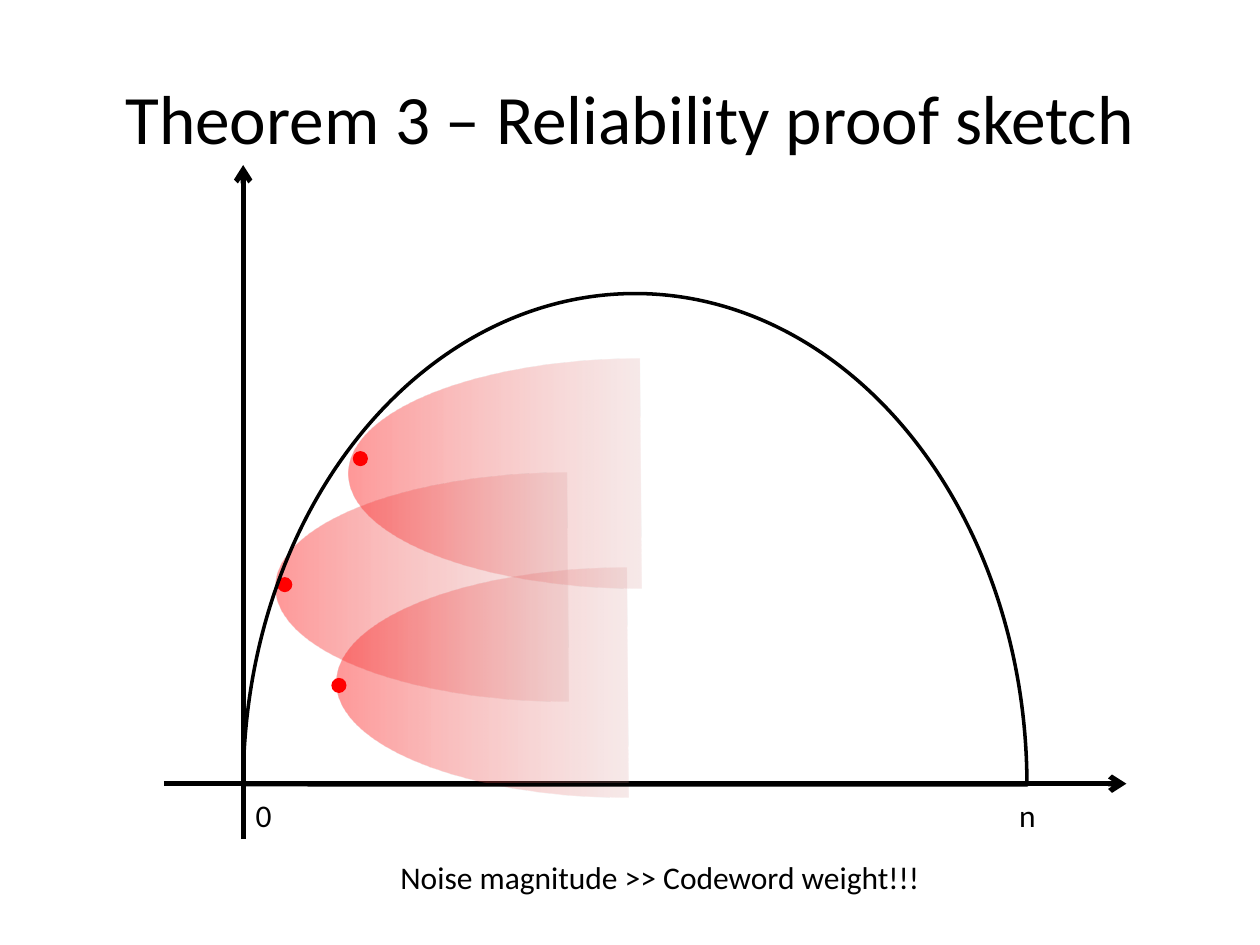
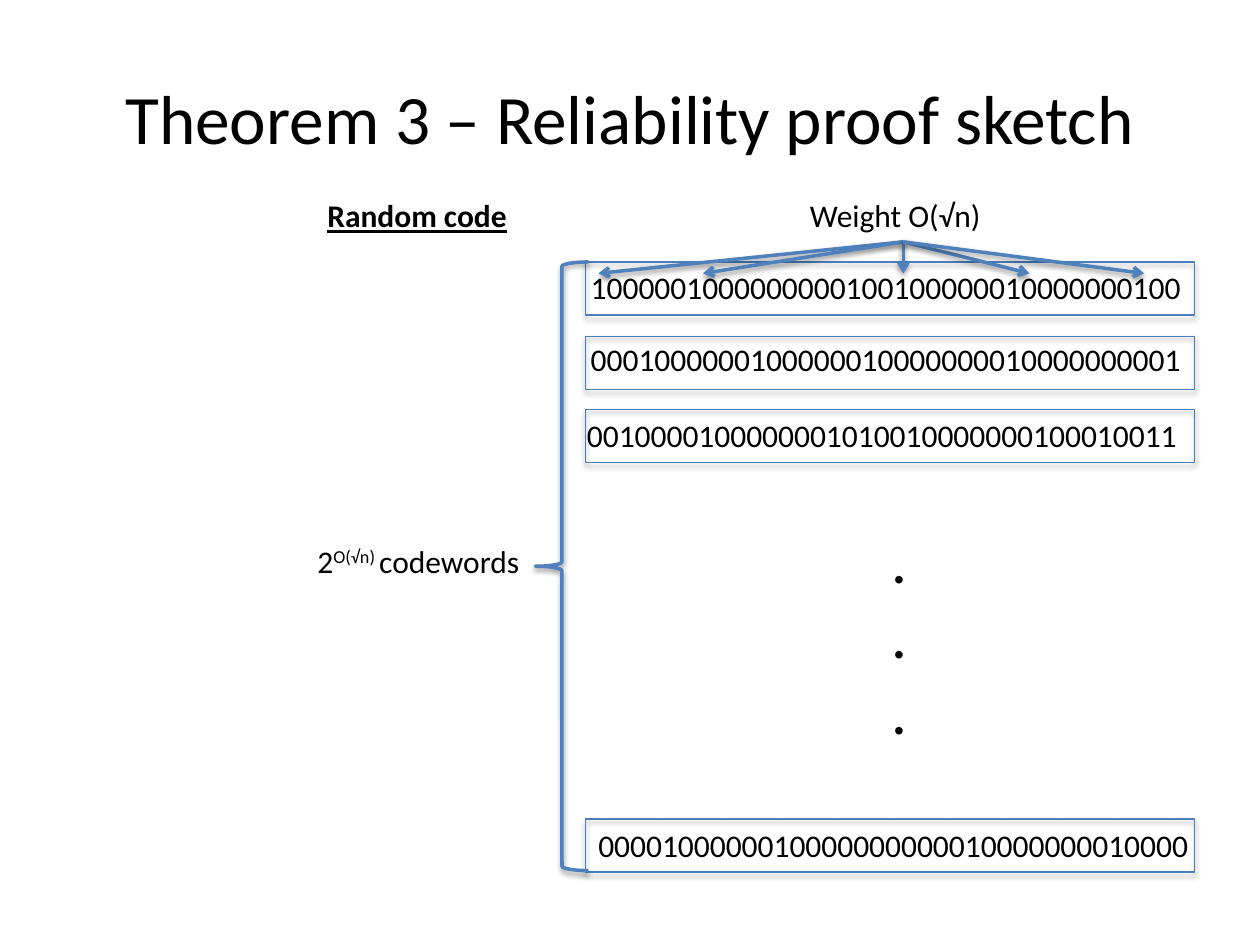
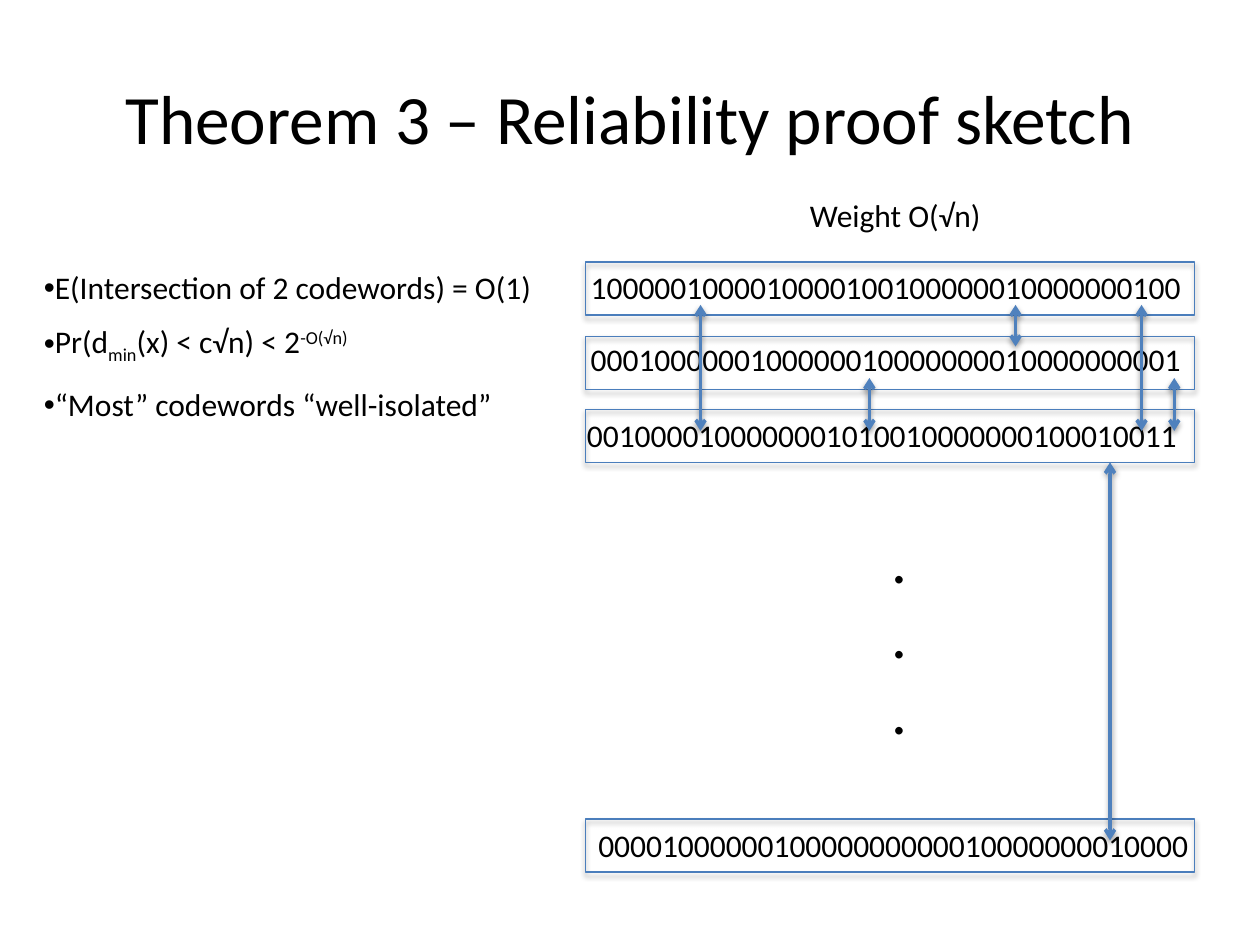
from lxml.etree import SubElement
from pptx import Presentation
from pptx.dml.color import RGBColor
from pptx.enum.shapes import MSO_CONNECTOR as Connector, MSO_SHAPE as Shape
from pptx.enum.text import MSO_ANCHOR as Anchor, MSO_AUTO_SIZE as AutoSize, PP_ALIGN as Align
from pptx.oxml.ns import qn
from pptx.util import Inches, Pt

BLACK = RGBColor(0x00, 0x00, 0x00)
RED = RGBColor(0xFF, 0x00, 0x00)
ROSE = RGBColor(0xD9, 0x96, 0x94)
WHITE = RGBColor(0xFF, 0xFF, 0xFF)
BLUE = RGBColor(0x4F, 0x81, 0xBD)
BORDER_BLUE = RGBColor(0x4B, 0x7E, 0xBC)
FONT = "Calibri"
TITLE = "Theorem 3 – Reliability proof sketch"
NOISE_FADE = ((0, RED, 40), (50, ROSE, 20), (100, WHITE, 0))
BOX_SHADOW = (35, 1.8)
LINE_SHADOW = (38, 1.6)


class Deck:
    """Holds the shared style and the slide being built."""

    def __init__(self):
        self.presentation = Presentation()
        self.presentation.slide_width = Inches(10)
        self.presentation.slide_height = Inches(7.5)
        self.slide = None

    def add_slide(self):
        self.slide = self.presentation.slides.add_slide(self.presentation.slide_layouts[6])
        title = self.text(0.5, 0.3, 9, 1.25, TITLE, size=39.6, grow=False)
        title.vertical_anchor = Anchor.MIDDLE
        title.paragraphs[0].alignment = Align.CENTER

    def text(self, left, top, width, height, *lines, size=18, wrap=True, grow=True,
             bullet=False, heading=False):
        """Adds lines, each a string or a list of (text, baseline percent) runs."""
        box = self.slide.shapes.add_textbox(
            Inches(left), Inches(top), Inches(width), Inches(height))
        frame = box.text_frame
        frame.word_wrap = wrap
        frame.auto_size = AutoSize.SHAPE_TO_FIT_TEXT if grow else AutoSize.NONE
        for index, line in enumerate(lines):
            paragraph = frame.add_paragraph() if index else frame.paragraphs[0]
            if bullet:
                properties = paragraph._p.get_or_add_pPr()
                SubElement(properties, qn("a:buFont"), typeface="Arial")
                SubElement(properties, qn("a:buChar"), char="•")
            font = paragraph.font
            font.name, font.size, font.color.rgb = FONT, Pt(size), BLACK
            if heading:
                font.bold = font.underline = True
            for words, baseline in [(line, 0)] if isinstance(line, str) else line:
                run = paragraph.add_run()
                run.text = words
                if baseline:
                    run._r.get_or_add_rPr().set("baseline", str(baseline * 1000))
        return frame

    def shape(self, kind, left, top, width, height, fill=None, line=None, weight=0,
              adjustments=(), rotation=0, shadow=None):
        shape = self.slide.shapes.add_shape(
            kind, Inches(left), Inches(top), Inches(width), Inches(height))
        shape.rotation = rotation
        for index, value in enumerate(adjustments):
            shape.adjustments[index] = value
        if fill is None:
            shape.fill.background()
        elif isinstance(fill, RGBColor):
            shape.fill.solid()
            shape.fill.fore_color.rgb = fill
        else:
            self.fade(shape, fill)
        if line is None:
            shape.line.fill.background()
        else:
            shape.line.color.rgb = line
            shape.line.width = Pt(weight)
        shape.shadow.inherit = False
        self.cast_shadow(shape, shadow)

    def fade(self, shape, stops):
        shape.fill.gradient()
        shape.fill.gradient_angle = 0
        stop_list = shape._element.spPr.find(qn("a:gradFill")).find(qn("a:gsLst"))
        for stop in list(stop_list):
            stop_list.remove(stop)
        for position, color, opacity in stops:
            stop = SubElement(stop_list, qn("a:gs"), pos=str(position * 1000))
            tint = SubElement(stop, qn("a:srgbClr"), val=str(color))
            SubElement(tint, qn("a:alpha"), val=str(opacity * 1000))

    def cast_shadow(self, shape, shadow):
        if shadow is None:
            return
        opacity, distance = shadow
        effects = shape._element.spPr.find(qn("a:effectLst"))
        outer = SubElement(effects, qn("a:outerShdw"), blurRad=str(Pt(3.1)),
                           dist=str(Pt(distance)), dir="5400000", rotWithShape="0")
        tint = SubElement(outer, qn("a:srgbClr"), val=str(BLACK))
        SubElement(tint, qn("a:alpha"), val=str(opacity * 1000))

    def arrow(self, start, end, color=BLUE, weight=2, double=False, shadow=LINE_SHADOW):
        arrow = self.slide.shapes.add_connector(
            Connector.STRAIGHT, *(Inches(value) for value in (*start, *end)))
        arrow.line.color.rgb = color
        arrow.line.width = Pt(weight)
        properties = arrow._element.spPr
        outline = properties.find(qn("a:ln"))
        for tip in ("a:headEnd", "a:tailEnd") if double else ("a:tailEnd",):
            SubElement(outline, qn(tip), type="arrow")
        SubElement(properties, qn("a:effectLst"))
        self.cast_shadow(arrow, shadow)

    def codebook(self, first_codeword):
        codewords = (
            (2.08, 4.59, 2.08, first_codeword),
            (2.67, 4.59, 2.65, "0001000000100000010000000010000000001"),
            (3.25, 4.56, 3.25, "0010000100000001010010000000100010011"),
            (6.5, 4.65, 6.51, "0000100000010000000000010000000010000"),
        )
        for frame_top, left, top, codeword in codewords:
            self.shape(Shape.RECTANGLE, 4.65, frame_top, 4.83, 0.42,
                       line=BORDER_BLUE, weight=0.75, shadow=BOX_SHADOW)
            self.text(left, top, 4.94, 0.4, codeword, wrap=False)
        self.text(6.98, 4.08, 0.33, 1.92, ".", ".", ".", size=36, wrap=False)
        self.text(6.33, 1.51, 1.67, 0.4, "Weight O(√n)")


def noise_slide(deck):
    deck.add_slide()
    for start, end in (((1.3, 6.22), (8.94, 6.22)), ((1.93, 6.66), (1.93, 1.31))):
        deck.arrow(start, end, BLACK, 3, shadow=None)
    deck.text(1.93, 6.27, 0.33, 0.4, "0", wrap=False)
    deck.text(7.99, 6.27, 0.34, 0.4, "n", wrap=False)
    for left, top in ((2.67, 4.51), (2.77, 2.85), (2.19, 3.75)):
        deck.shape(Shape.CHORD, left, top, 4.65, 1.82, NOISE_FADE,
                   adjustments=(54.224, 161.144))
    for left, top in ((2.2, 4.58), (2.63, 5.38), (2.8, 3.58)):
        deck.shape(Shape.OVAL, left, top, 0.12, 0.12, RED)
    deck.shape(Shape.CHORD, 1.14, 3.12, 7.8, 6.22, line=BLACK, weight=2,
               adjustments=(54.016, 162), rotation=90)
    deck.text(3.08, 6.76, 4.36, 0.4, "Noise magnitude >> Codeword weight!!!", wrap=False)


def random_code_slide(deck):
    deck.add_slide()
    deck.codebook("1000001000000000100100000010000000100")
    deck.text(2.5, 1.51, 1.67, 0.4, "Random code", heading=True)
    deck.text(2.42, 4.25, 2.5, 0.4, [("2", 0), ("O(√n) ", 30), ("codewords", 0)])
    deck.shape(Shape.LEFT_BRACE, 4.25, 2.08, 0.42, 4.83,
               line=BLUE, weight=2, shadow=LINE_SHADOW)
    for one_bit in (4.75, 5.58, 7.17, 8.17, 9.08):
        deck.arrow((7.17, 1.92), (one_bit, 2.17))


def isolation_slide(deck):
    deck.add_slide()
    deck.codebook("1000001000010000100100000010000000100")
    overlaps = ((5.56, 2.42, 3.42), (6.9, 3, 3.42), (8.06, 2.42, 2.75),
                (9.06, 2.42, 3.42), (9.32, 3, 3.42), (8.81, 3.67, 6.67))
    for shared_bit, top, bottom in overlaps:
        deck.arrow((shared_bit, top), (shared_bit, bottom), double=True)
    claims = (
        (2.08, "E(Intersection of 2 codewords) = O(1)"),
        (2.51, [("Pr(d", 0), ("min", -25), ("(x) < c√n) < 2", 0), ("-O(√n)", 30)]),
        (3.01, "“Most” codewords “well-isolated”"),
    )
    for top, claim in claims:
        deck.text(0.25, top, 4.42, 0.4, claim, bullet=True)


def main():
    deck = Deck()
    noise_slide(deck)
    random_code_slide(deck)
    isolation_slide(deck)
    deck.presentation.save("out.pptx")


if __name__ == "__main__":
    main()
